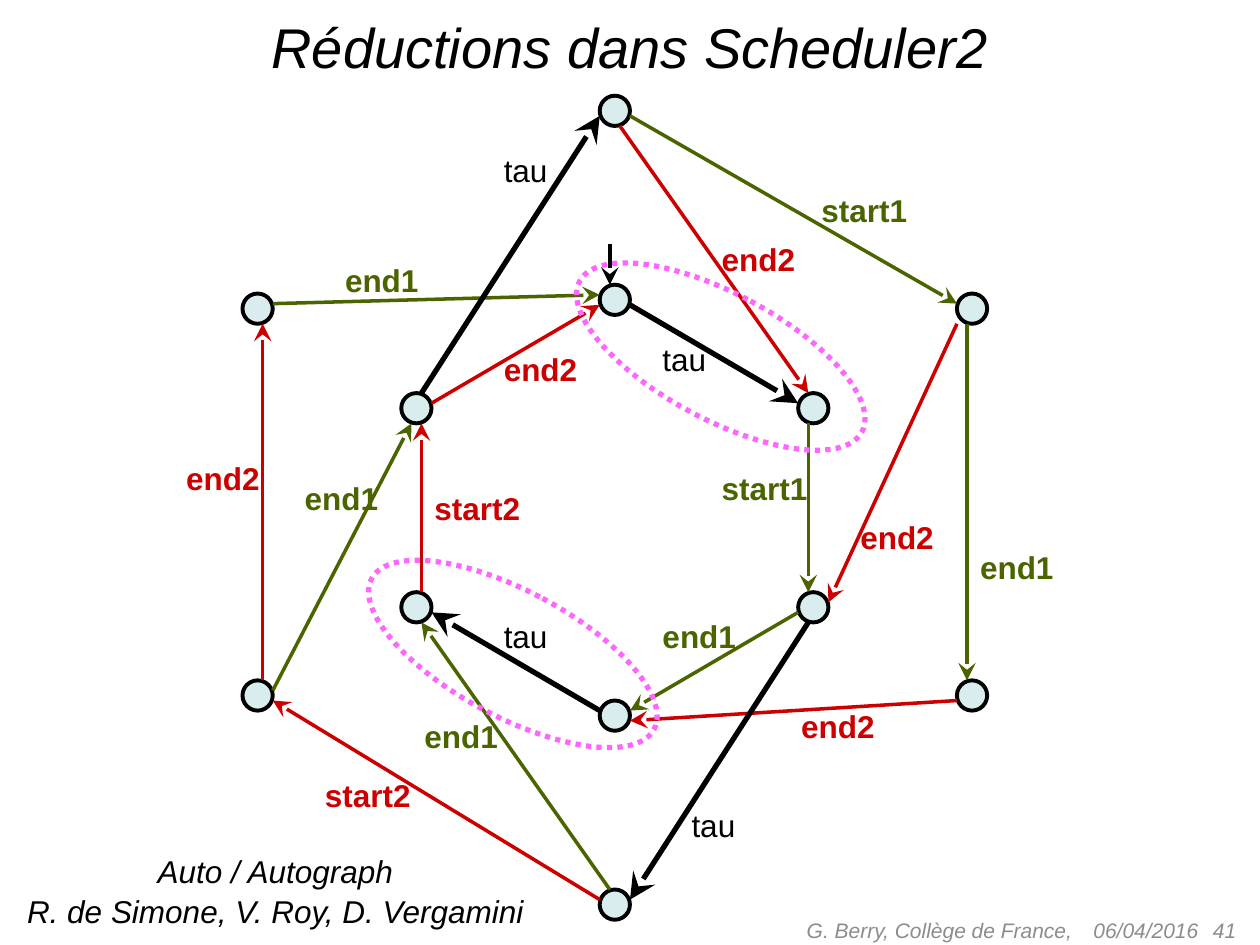
from dataclasses import dataclass

from lxml.etree import SubElement
from pptx import Presentation
from pptx.dml.color import RGBColor
from pptx.enum.dml import MSO_LINE
from pptx.enum.shapes import MSO_CONNECTOR, MSO_SHAPE
from pptx.enum.text import MSO_ANCHOR, PP_ALIGN
from pptx.oxml.ns import qn
from pptx.util import Inches, Pt


@dataclass(frozen=True)
class Theme:
    font: str = "Arial"
    black: str = "000000"
    gray: str = "8C8C8C"
    green: str = "4A6400"
    red: str = "CC0000"
    pink: str = "FF66FF"
    node_fill: str = "D9EDEF"
    title_size: int = 32
    body_size: int = 18
    footer_size: int = 12


THEME = Theme()

# Content
TITLE = "Réductions dans Scheduler2"
AUTHORS = ["Auto / Autograph", "R. de Simone, V. Roy, D. Vergamini"]
FOOTERS = [  # text, left, width, alignment
    ("G. Berry, Collège de France,", 5.5, 3.11, PP_ALIGN.RIGHT),
    ("06/04/2016", 8.58, 1.1, PP_ALIGN.LEFT),
    ("41", 7.58, 2.33, PP_ALIGN.RIGHT),
]

# State centres: columns are symmetric about the middle axis
AXIS, INNER, OUTER = 4.88, 1.575, 2.835
NODES = {
    "inner top": (AXIS, 2.38),
    "inner bottom": (AXIS, 5.68),
    "inner lower left": (AXIS - INNER, 4.82),
    "inner lower right": (AXIS + INNER, 4.82),
    "inner upper right": (AXIS + INNER, 3.24),
    "inner upper left": (AXIS - INNER, 3.24),
    "outer top": (AXIS, 0.88),
    "outer bottom": (AXIS, 7.18),
    "outer lower left": (AXIS - OUTER, 5.52),
    "outer lower right": (AXIS + OUTER, 5.52),
    "outer upper right": (AXIS + OUTER, 2.45),
    "outer upper left": (AXIS - OUTER, 2.45),
}

# Transitions: source, its port, target, its port, action, label left and top
EDGES = [
    ("inner top", "ESE", "inner upper right", "WNW", "tau", 5.16, 2.65),
    ("inner bottom", "WNW", "inner lower left", "ESE", "tau", 3.9, 4.85),
    ("inner upper left", "ENE", "inner top", "WSW", "end2", 3.9, 2.73),
    ("inner lower right", "WSW", "inner bottom", "ENE", "end1", 5.16, 4.85),
    ("inner upper right", "SSW", "inner lower right", "NNW", "start1", 5.63, 3.67),
    ("inner lower left", "NNE", "inner upper left", "SSE", "start2", 3.35, 3.83),
    ("outer top", "ESE", "outer upper right", "WNW", "start1", 6.42, 1.47),
    ("outer bottom", "WNW", "outer lower left", "ESE", "start2", 2.48, 6.11),
    ("outer upper left", "ENE", "inner top", "WNW", "end1", 2.64, 2.02),
    ("outer lower right", "WSW", "inner bottom", "ESE", "end2", 6.26, 5.56),
    ("outer upper right", "SSW", "outer lower right", "NNW", "end1", 7.68, 4.3),
    ("outer lower left", "NNE", "outer upper left", "SSE", "end2", 1.38, 3.59),
    ("inner lower right", "SSW", "outer bottom", "ENE", "tau", 5.39, 6.35),
    ("outer bottom", "NNW", "inner lower left", "SSE", "end1", 3.27, 5.64),
    ("outer lower left", "ENE", "inner upper left", "SSW", "end1", 2.32, 3.75),
    ("outer upper right", "SW", "inner lower right", "ENE", "end2", 6.73, 4.06),
    ("inner upper left", "NNE", "outer top", "WSW", "tau", 3.9, 1.15),
    ("outer top", "SSE", "inner upper right", "NNW", "end2", 5.63, 1.86),
]
ACTIONS = {  # colour, line width, bold label, label width
    "tau": (THEME.black, 3, False, 0.6),
    "start1": (THEME.green, 2, True, 1.06),
    "start2": (THEME.red, 2, True, 1.06),
    "end1": (THEME.green, 2, True, 0.87),
    "end2": (THEME.red, 2, True, 0.87),
}
CLUSTERS = [(5.22, 1.56), (3.57, 3.92)]

# Ports lie on a square around the node, named by compass point
DIAMETER, NEAR, FAR = 0.24, 0.04, 0.12
PORTS = {"SW": (-FAR, FAR)}
for vertical, y_sign in (("N", -1), ("S", 1)):
    for horizontal, x_sign in (("W", -1), ("E", 1)):
        corner = vertical + horizontal
        PORTS[horizontal + corner] = (x_sign * FAR, y_sign * NEAR)
        PORTS[vertical + corner] = (x_sign * NEAR, y_sign * FAR)


def write(frame, lines, size=THEME.body_size, color=THEME.black, bold=False,
          italic=False, align=PP_ALIGN.LEFT, anchor=MSO_ANCHOR.TOP, spacing=None):
    frame.word_wrap = True
    frame.vertical_anchor = anchor
    for index, line in enumerate(lines):
        para = frame.add_paragraph() if index else frame.paragraphs[0]
        para.alignment = align
        para.line_spacing = spacing
        span = para.add_run()
        span.text = line
        font = span.font
        font.name, font.size = THEME.font, Pt(size)
        font.bold, font.italic = bold, italic
        font.color.rgb = RGBColor.from_string(color)


def add_text(page, lines, left, top, width, height, **style):
    box = page.shapes.add_textbox(*map(Inches, (left, top, width, height)))
    write(box.text_frame, lines, **style)
    return box


def add_ellipse(page, left, top, width, height, color, weight, fill=None):
    oval = page.shapes.add_shape(
        MSO_SHAPE.OVAL, *map(Inches, (left, top, width, height)))
    oval.shadow.inherit = False
    oval.line.color.rgb = RGBColor.from_string(color)
    oval.line.width = Pt(weight)
    if fill:
        oval.fill.solid()
        oval.fill.fore_color.rgb = RGBColor.from_string(fill)
    else:
        oval.fill.background()
    return oval


def add_arrow(page, start, end, color, weight):
    arrow = page.shapes.add_connector(
        MSO_CONNECTOR.STRAIGHT, *map(Inches, (*start, *end)))
    arrow.line.color.rgb = RGBColor.from_string(color)
    arrow.line.width = Pt(weight)
    SubElement(arrow.line._get_or_add_ln(), qn("a:tailEnd"),
               type="stealth", w="lg", len="lg")
    SubElement(arrow._element.spPr, qn("a:effectLst"))


def port(node, side):
    return tuple(center + shift for center, shift in zip(NODES[node], PORTS[side]))


def main():
    deck = Presentation()
    deck.slide_width, deck.slide_height = Inches(10), Inches(7.5)
    page = deck.slides.add_slide(deck.slide_layouts[5])

    # Title
    title = page.shapes.title
    title.left, title.top, title.width, title.height = map(
        Inches, (0.25, 0.05, 9.5, 0.64))
    write(title.text_frame, [TITLE], size=THEME.title_size, italic=True,
          align=PP_ALIGN.CENTER)

    # Footer
    for text, left, width, align in FOOTERS:
        add_text(page, [text], left, 7.18, width, 0.4, size=THEME.footer_size,
                 color=THEME.gray, italic=True, align=align,
                 anchor=MSO_ANCHOR.MIDDLE)

    # States
    for x, y in NODES.values():
        add_ellipse(page, x - DIAMETER / 2, y - DIAMETER / 2, DIAMETER, DIAMETER,
                    THEME.black, 2.25, fill=THEME.node_fill)

    # Transitions, then the entry arrow
    for source, leave, target, enter, action, left, top in EDGES:
        color, weight, bold, width = ACTIONS[action]
        add_arrow(page, port(source, leave), port(target, enter), color, weight)
        add_text(page, [action], left, top, width, 0.4, color=color, bold=bold)
    entry_x, entry_y = port("inner top", "NNW")
    add_arrow(page, (entry_x, entry_y - 0.32), (entry_x, entry_y), THEME.black, 2)

    # Dotted outlines of the reducible pairs
    for left, top in CLUSTERS:
        outline = add_ellipse(page, left, top, 1, 2.54, THEME.pink, 3)
        outline.rotation = 118.1
        outline.line.dash_style = MSO_LINE.ROUND_DOT

    # Authors
    authors = add_text(page, AUTHORS, 0.04, 6.73, 4.29, 0.72, italic=True,
                       align=PP_ALIGN.CENTER, spacing=1.05)
    authors.text_frame.margin_top = Inches(0.02)
    authors.text_frame.margin_bottom = Inches(0.07)

    deck.save("out.pptx")


if __name__ == "__main__":
    main()
